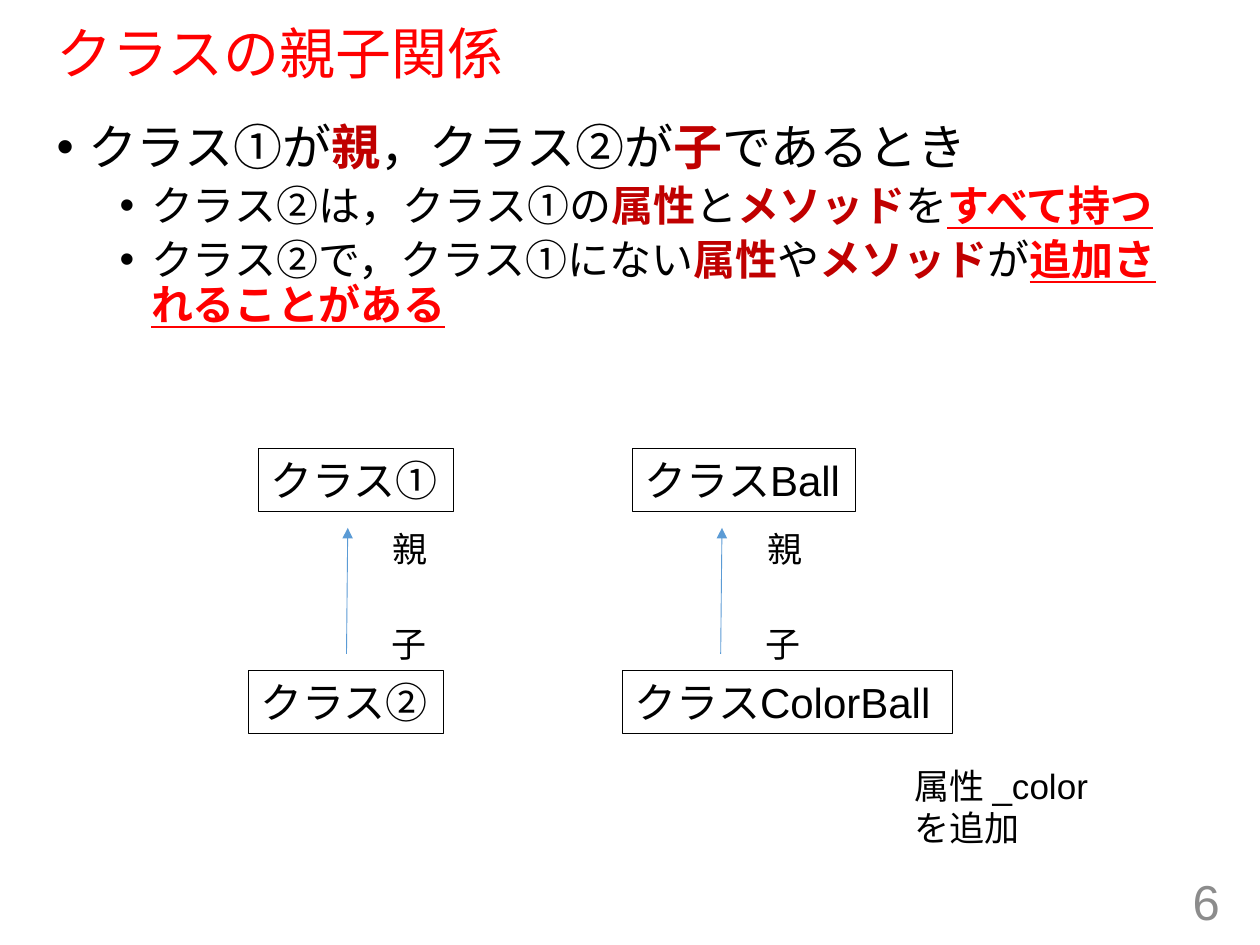
from lxml.etree import SubElement
from pptx import Presentation
from pptx.dml.color import RGBColor
from pptx.enum.shapes import MSO_CONNECTOR as LINE, MSO_SHAPE as SHAPE
from pptx.enum.text import MSO_ANCHOR as ANCHOR, PP_ALIGN as ALIGN
from pptx.oxml.ns import qn
from pptx.util import Inches, Pt

BLACK = RGBColor(0, 0, 0)
RED = RGBColor(0xFF, 0, 0)
DARK = RGBColor(0xC0, 0, 0)
GRAY = RGBColor(0x8C, 0x8C, 0x8C)
BLUE = RGBColor(0x5B, 0x9B, 0xD5)

PLAIN = {"color": BLACK}
TERM = {"color": DARK, "bold": True}
KEY = {"color": RED, "bold": True, "underline": True}

TITLE = "クラスの親子関係"
# level, runs of (text, style)
BODY = [
    (0, [("クラス①が", PLAIN), ("親", TERM), ("，クラス②が", PLAIN),
         ("子", TERM), ("であるとき", PLAIN)]),
    (1, [("クラス②は，クラス①の", PLAIN), ("属性", TERM), ("と", PLAIN),
         ("メソッド", TERM), ("を", PLAIN), ("すべて持つ", KEY)]),
    (1, [("クラス②で，クラス①にない", PLAIN), ("属性", TERM), ("や", PLAIN),
         ("メソッド", TERM), ("が", PLAIN), ("追加されることがある", KEY)]),
]
# size, space before, left indent of each level
LEVELS = [(28, 10, 0.25), (24, 5, 0.75)]
# left edge, parent (name, width), child (name, width)
PAIRS = [
    (1.97, ("クラス①", 1.55), ("クラス②", 1.55)),
    (4.94, ("クラスBall", 1.77), ("クラスColorBall", 2.62)),
]
NOTE = "属性 _color を追加"
PAGE = "6"

prs = Presentation()
prs.slide_width, prs.slide_height = Inches(10), Inches(7.5)
slide = prs.slides.add_slide(prs.slide_layouts[6])
shapes = slide.shapes


def add_run(para, text, size, style):
    run = para.add_run()
    run.text = text
    font = run.font
    font.name, font.size = "Arial", Pt(size)
    font.color.rgb = style["color"]
    for name in ("bold", "underline"):
        setattr(font, name, style.get(name, False))


def add_text(box, text, size, color=BLACK, wrap=False, align=ALIGN.LEFT,
             anchor=ANCHOR.TOP):
    frame = box.text_frame
    frame.word_wrap, frame.vertical_anchor = wrap, anchor
    para = frame.paragraphs[0]
    para.alignment = align
    add_run(para, text, size, {"color": color})
    return para


def add_box(x, y, w, h):
    return shapes.add_textbox(*map(Inches, (x, y, w, h)))


def add_class(x, y, name, w):
    rect = shapes.add_shape(SHAPE.RECTANGLE, *map(Inches, (x, y, w, 0.5)))
    rect.shadow.inherit = False
    rect.fill.background()
    rect.line.color.rgb, rect.line.width = BLACK, Pt(0.75)
    add_text(rect, name, 24)


def add_arrow(*ends):
    line = shapes.add_connector(LINE.STRAIGHT, *map(Inches, ends))
    line.line.color.rgb, line.line.width = BLUE, Pt(0.5)
    SubElement(line.line._get_or_add_ln(), qn("a:tailEnd"), type="triangle")
    SubElement(line._element.spPr, qn("a:effectLst"))


def add_bullet(para, left):
    props = para._p.get_or_add_pPr()
    props.set("marL", str(Inches(left)))
    props.set("indent", str(Inches(-0.25)))
    SubElement(props, qn("a:buFont"), typeface="Arial")
    SubElement(props, qn("a:buChar"), char="•")


title = add_text(add_box(0.35, 0.19, 9.25, 0.51), TITLE, 32, RED, wrap=True,
                 anchor=ANCHOR.MIDDLE)
title.line_spacing = 0.9

frame = add_box(0.35, 0.93, 9.02, 5.83).text_frame
frame.word_wrap = True
for i, (level, runs) in enumerate(BODY):
    para = frame.add_paragraph() if i else frame.paragraphs[0]
    size, before, left = LEVELS[level]
    para.level = level
    add_bullet(para, left)
    para.line_spacing = 0.9
    if i:
        para.space_before = Pt(before)
    for text, style in runs:
        add_run(para, text, size, style)

for x, parent, child in PAIRS:
    add_class(x + 0.08, 3.56, *parent)
    add_class(x, 5.32, *child)
    add_arrow(x + 0.78, 5.19, x + 0.79, 4.19)
    add_text(add_box(x + 1.05, 4.14, 0.48, 0.44), "親", 20)
    add_text(add_box(x + 1.04, 4.89, 0.48, 0.44), "子", 20)

add_text(add_box(7.16, 6.02, 1.85, 0.44), NOTE, 20)
add_text(add_box(7.53, 6.95, 2.25, 0.4), PAGE, 28, GRAY, wrap=True,
         align=ALIGN.RIGHT, anchor=ANCHOR.MIDDLE)

prs.save("out.pptx")
